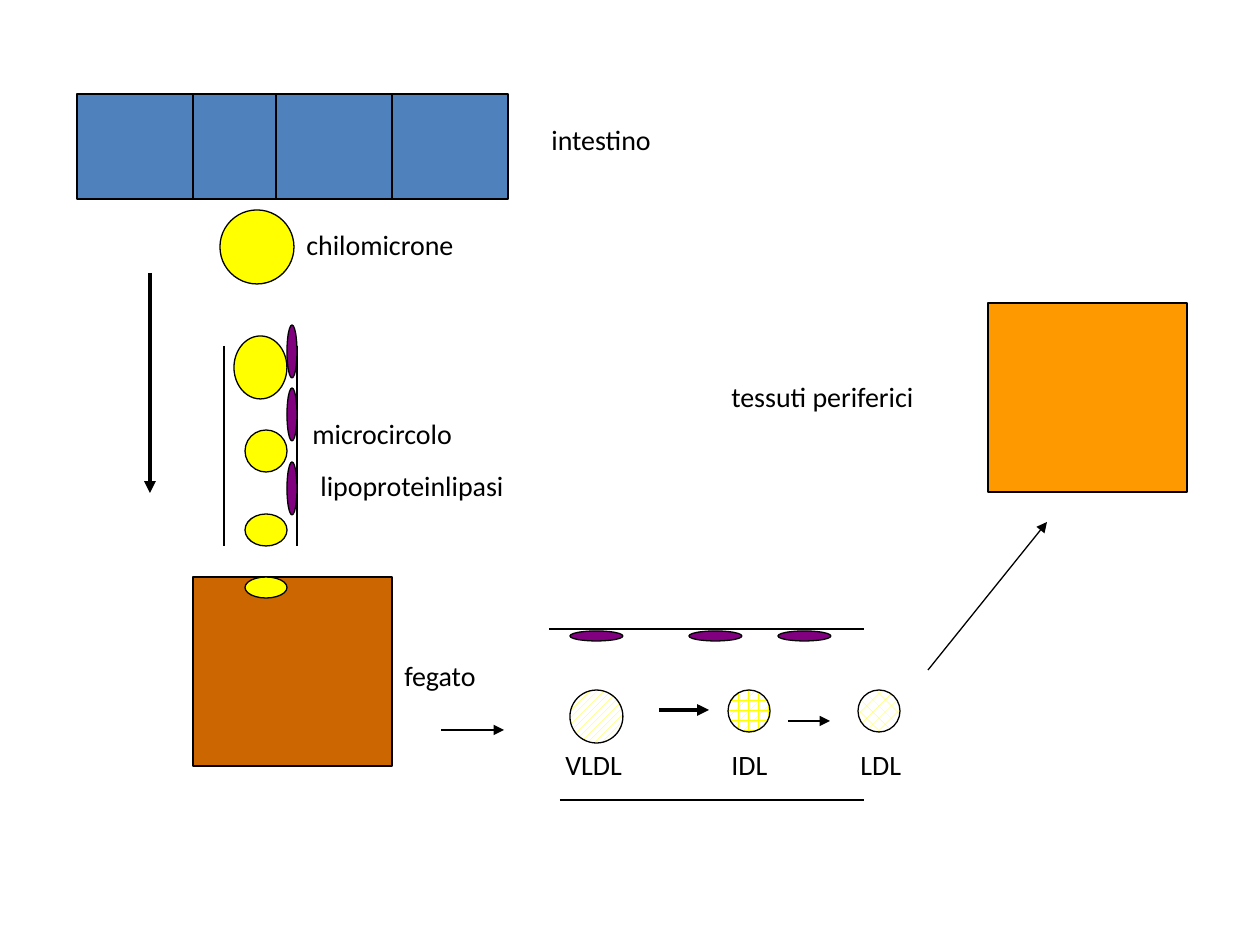
from lxml import etree
from pptx import Presentation, util as u
from pptx.dml.color import RGBColor
from pptx.enum import dml, shapes, text
from pptx.oxml.ns import qn

PX = u.Inches(1) / 126
RECT, OVAL = shapes.MSO_SHAPE.RECTANGLE, shapes.MSO_SHAPE.OVAL
BLACK, WHITE, YELLOW, PURPLE = "000000", "FFFFFF", "FFFF00", "800080"
BLUE, BROWN, ORANGE = "4F81BD", "CC6600", "FF9900"


def px(*lengths):
    return [round(length * PX) for length in lengths]


def color(value):
    return RGBColor.from_string(value)


def add_block(page, kind, left, top, width, height, fill):
    block = page.shapes.add_shape(kind, *px(left, top, width, height))
    block.shadow.inherit = False
    block.fill.solid()
    block.fill.fore_color.rgb = color(fill)
    block.line.color.rgb = color(BLACK)
    block.line.width = u.Pt(0.75)
    return block


def add_particle(page, left, top, size, pattern):
    """Draw a lipoprotein as a circle with a yellow pattern."""
    particle = add_block(page, OVAL, left, top, size, size, WHITE)
    particle.rotation = 270
    particle.fill.patterned()
    particle.fill.pattern = pattern
    particle.fill.fore_color.rgb = color(YELLOW)
    particle.fill.back_color.rgb = color(WHITE)


def add_line(page, x1, y1, x2, y2, arrow=False, weight=0.75):
    line = page.shapes.add_connector(
        shapes.MSO_CONNECTOR.STRAIGHT, *px(x1, y1, x2, y2))
    line.line.color.rgb = color(BLACK)
    line.line.width = u.Pt(weight)
    if arrow:
        outline = line.line._get_or_add_ln()
        etree.SubElement(outline, qn("a:tailEnd"), type="triangle")
    etree.SubElement(line._element.spPr, qn("a:effectLst"))


def add_label(page, left, top, width, words):
    box = page.shapes.add_textbox(*px(left, top, width, 47))
    frame = box.text_frame
    frame.word_wrap = True
    frame.auto_size = text.MSO_AUTO_SIZE.SHAPE_TO_FIT_TEXT
    span = frame.paragraphs[0].add_run()
    span.text = words
    span.font.name = "Calibri"
    span.font.size = u.Pt(16)
    span.font.color.rgb = color(BLACK)


def add_intestine(page):
    for left in (77, 193, 276, 392):
        add_block(page, RECT, left, 94, 116, 105, BLUE)
    add_label(page, 539, 116, 140, "intestino")
    add_block(page, OVAL, 220, 210, 74, 74, YELLOW)
    add_label(page, 294, 221, 188, "chilomicrone")


def add_liver(page):
    add_block(page, RECT, 193, 577, 199, 189, BROWN)
    add_label(page, 392, 652, 112, "fegato")
    add_block(page, OVAL, 245, 577, 42, 21, YELLOW)
    add_line(page, 441, 730, 504, 730, arrow=True)


def add_microcirculation(page):
    for x in (224, 297):
        add_line(page, x, 346, x, 546)
    for left, top, width, height in ((234, 336, 53, 63), (245, 430, 42, 42),
                                     (245, 514, 42, 32)):
        add_block(page, OVAL, left, top, width, height, YELLOW)
    add_line(page, 150, 273, 150, 493, arrow=True, weight=2.25)
    for top in (325, 388, 462):
        add_block(page, OVAL, 287, top, 10, 53, PURPLE)
    add_label(page, 300, 410, 185, "microcircolo")
    add_label(page, 308, 462, 231, "lipoproteinlipasi")


def add_lipoproteins(page):
    pattern = dml.MSO_PATTERN
    add_particle(page, 570, 690, 53, pattern.WIDE_UPWARD_DIAGONAL)
    add_particle(page, 728, 690, 42, pattern.PLAID)
    add_particle(page, 858, 690, 42, pattern.PERCENT_30)
    for left, width, words in ((553, 95, "VLDL"), (719, 77, "IDL"),
                               (848, 77, "LDL")):
        add_label(page, left, 741, width, words)
    add_line(page, 659, 710, 709, 710, arrow=True, weight=2.25)
    add_line(page, 788, 721, 830, 721, arrow=True)
    add_line(page, 549, 629, 864, 629)
    add_line(page, 560, 800, 864, 800)
    for left in (570, 689, 778):
        add_block(page, OVAL, left, 631, 53, 10, PURPLE)


def add_tissues(page):
    add_block(page, RECT, 988, 303, 199, 189, ORANGE)
    add_label(page, 719, 373, 250, "tessuti periferici")
    add_line(page, 928, 670, 1047, 522, arrow=True)


def main():
    deck = Presentation()
    deck.slide_width, deck.slide_height = u.Inches(10), u.Inches(7.5)
    page = deck.slides.add_slide(deck.slide_layouts[6])
    add_intestine(page)
    add_liver(page)
    add_microcirculation(page)
    add_lipoproteins(page)
    add_tissues(page)
    deck.save("out.pptx")


if __name__ == "__main__":
    main()
